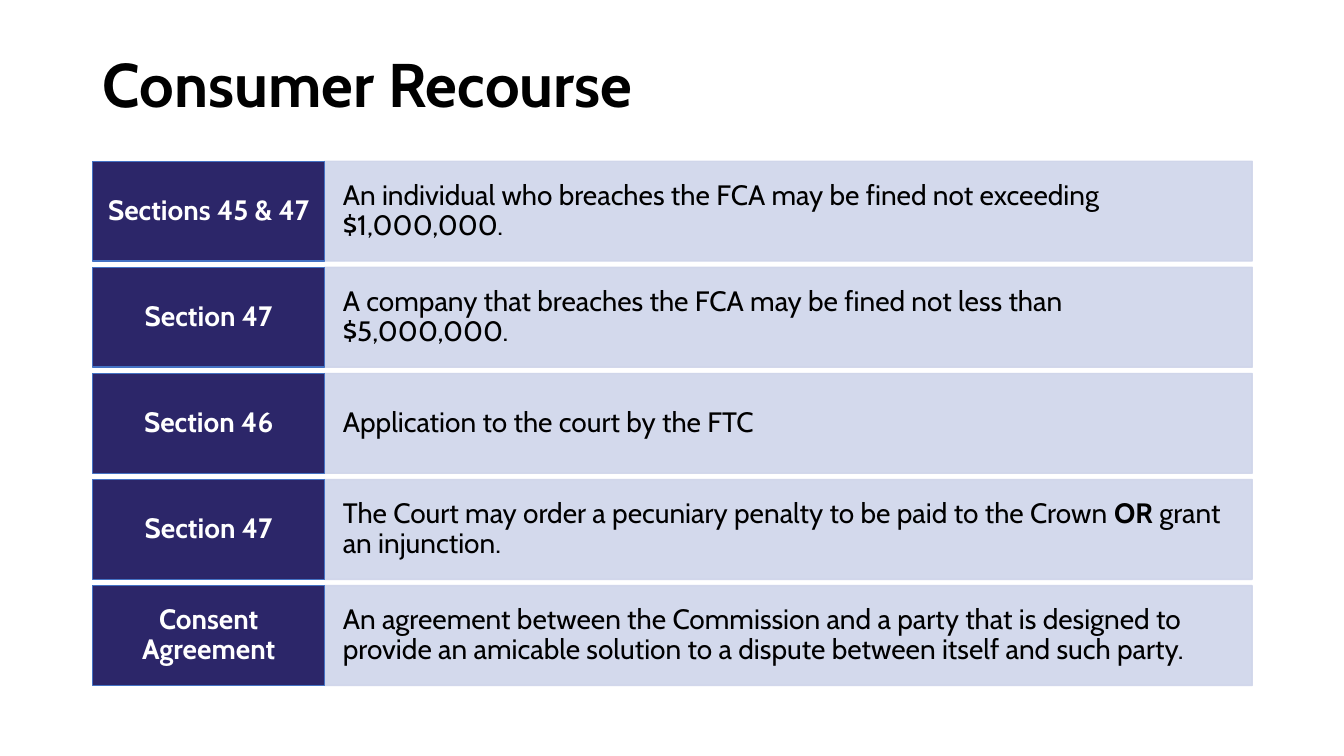
from pptx import Presentation
from pptx.dml.color import RGBColor
from pptx.enum.shapes import MSO_SHAPE
from pptx.enum.text import MSO_ANCHOR, MSO_AUTO_SIZE, PP_ALIGN
from pptx.oxml.ns import qn
from pptx.util import Inches, Pt
from lxml.etree import SubElement

FONT = "Cabin"
COLORS = {
    "black": "000000",
    "white": "FFFFFF",
    "navy": "2C2669",
    "blue": "4472C4",
    "lavender": "CFD5EA",
}
LEFT, LABEL_WIDTH, DETAIL_WIDTH = 0.92, 2.3, 9.2
FIRST_TOP, LAST_TOP, ROW_HEIGHT = 1.6, 5.81, 0.99

RECOURSES = [
    ("Sections 45 & 47",
     [("An individual who breaches the FCA may be fined not exceeding $1,000,000.", False)]),
    ("Section 47",
     [("A company that breaches the FCA may be fined not less than $5,000,000.", False)]),
    ("Section 46",
     [("Application to the court by the FTC", False)]),
    ("Section 47",
     [("The Court may order a pecuniary penalty to be paid to the Crown ", False),
      ("OR", True),
      (" grant an injunction.", False)]),
    ("Consent Agreement",
     [("An agreement between the Commission and a party that is designed to provide "
       "an amicable solution to a dispute between itself and such party.", False)]),
]


def rgb(name):
    return RGBColor.from_string(COLORS[name])


def format_paragraph(paragraph, size, color, align):
    paragraph.alignment = align
    paragraph.line_spacing = 0.9
    paragraph.font.name = FONT
    paragraph.font.size = Pt(size)
    paragraph.font.color.rgb = rgb(color)


def add_title(slide, text):
    title = slide.shapes.title
    title.left, title.top = Inches(LEFT), Inches(0.49)
    title.width, title.height = Inches(11.5), Inches(0.94)
    frame = title.text_frame
    frame.text = text
    frame.auto_size = MSO_AUTO_SIZE.NONE
    frame.vertical_anchor = MSO_ANCHOR.TOP
    heading = frame.paragraphs[0]
    format_paragraph(heading, 44, "black", PP_ALIGN.LEFT)
    heading.font.bold = True


def add_cell(slide, left, top, width, fill, line, margins):
    cell = slide.shapes.add_shape(
        MSO_SHAPE.RECTANGLE, Inches(left), Inches(top), Inches(width), Inches(ROW_HEIGHT))
    cell.shadow.inherit = False
    cell.fill.solid()
    cell.fill.fore_color.rgb = rgb(fill)
    cell.line.color.rgb = rgb(line)
    cell.line.width = Pt(1)
    frame = cell.text_frame
    frame.word_wrap = True
    frame.vertical_anchor = MSO_ANCHOR.MIDDLE
    side, edge = margins
    frame.margin_left = frame.margin_right = Inches(side)
    frame.margin_top = frame.margin_bottom = Inches(edge)
    return cell


def add_label(slide, top, text):
    label = add_cell(slide, LEFT, top, LABEL_WIDTH, "navy", "blue", (0.12, 0.1))
    paragraph = label.text_frame.paragraphs[0]
    paragraph.text = text
    format_paragraph(paragraph, 20, "white", PP_ALIGN.CENTER)
    paragraph.font.bold = True


def add_detail(slide, top, runs):
    detail = add_cell(slide, LEFT + LABEL_WIDTH, top, DETAIL_WIDTH,
                      "lavender", "lavender", (0.18, 0.25))
    for color in detail._element.spPr.iter(qn("a:srgbClr")):
        SubElement(color, qn("a:alpha"), val="90000")
    paragraph = detail.text_frame.paragraphs[0]
    format_paragraph(paragraph, 20, "black", PP_ALIGN.LEFT)
    for text, bold in runs:
        run = paragraph.add_run()
        run.text = text
        run.font.bold = bold


def main():
    deck = Presentation()
    deck.slide_width, deck.slide_height = Inches(13.33), Inches(7.5)
    slide = deck.slides.add_slide(deck.slide_layouts[5])
    add_title(slide, "Consumer Recourse")
    pitch = (LAST_TOP - FIRST_TOP) / (len(RECOURSES) - 1)
    for row, (section, remedy) in enumerate(RECOURSES):
        top = FIRST_TOP + row * pitch
        add_detail(slide, top, remedy)
        add_label(slide, top, section)
    deck.save("out.pptx")


if __name__ == "__main__":
    main()
